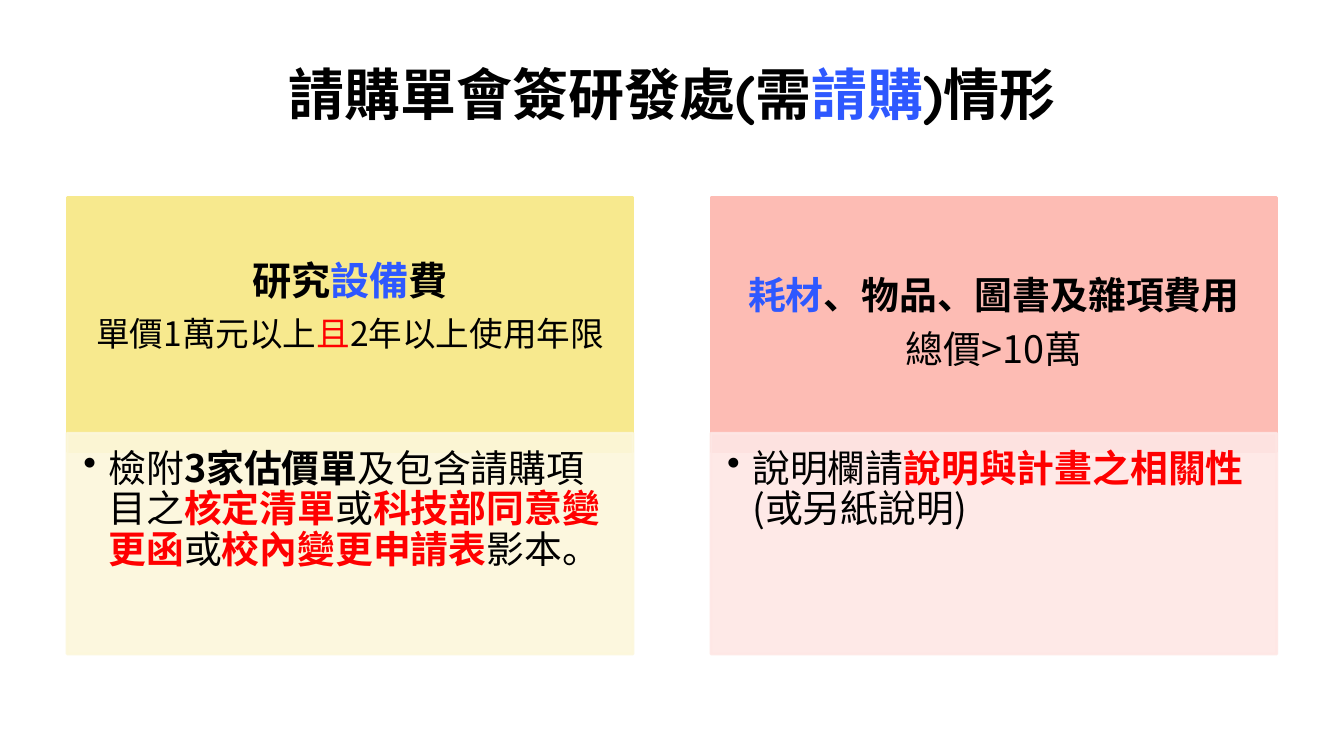
from lxml import etree
from pptx import Presentation, util as u
from pptx.dml.color import RGBColor
from pptx.enum import shapes, text
from pptx.oxml import ns

W, H = u.Inches(13.333), u.Inches(7.5)
CJK, TITLE_FONT = "Noto Sans CJK SC", "Quicksand"

BLACK = RGBColor(0, 0, 0)
BLUE = RGBColor(0x2E, 0x58, 0xFF)
RED = RGBColor(0xFF, 0, 0)
YELLOW = RGBColor(0xF7, 0xE9, 0x8E)
CREAM = RGBColor(0xFC, 0xF7, 0xDB)
PINK = RGBColor(0xFD, 0xBC, 0xB4)
BLUSH = RGBColor(0xFE, 0xE7, 0xE5)

# Grid, as shares of the slide's size
MARGIN, COL_W = 0.05, 0.421
COLUMNS = (MARGIN, 1 - MARGIN - COL_W)
HEAD_TOP, HEAD_H = 0.261, 0.337
BODY_TOP, BODY_H = 0.573, 0.292


def area(x, y, w, h):
    return round(x * W), round(y * H), round(w * W), round(h * H)


def write(p, runs, size, font=CJK, align=text.PP_ALIGN.LEFT, line=None,
          after=0, bullet=False):
    """Fill a paragraph with (text, colour, bold) runs."""
    p.alignment = align
    p.space_after = u.Pt(after)
    if line:
        p.line_spacing = line
    if bullet:
        pPr = p._p.get_or_add_pPr()
        pPr.set("marL", str(u.Inches(0.25)))
        pPr.set("indent", str(-u.Inches(0.25)))
        etree.SubElement(pPr, ns.qn("a:buChar")).set("char", "•")
    for words, color, bold in runs:
        r = p.add_run()
        r.text = words
        r.font.size, r.font.bold, r.font.name = u.Pt(size), bold, font
        r.font.color.rgb = color
        ea = etree.SubElement(r._r.get_or_add_rPr(), ns.qn("a:ea"))
        ea.set("typeface", CJK)


def frame(sp, anchor, insets=(0.1, 0.05, 0.1, 0.05)):
    tf = sp.text_frame
    tf.word_wrap = True
    tf.vertical_anchor = anchor
    (tf.margin_left, tf.margin_top,
     tf.margin_right, tf.margin_bottom) = map(u.Inches, insets)
    return tf


def panel(s, box, color, opacity=100):
    sp = s.shapes.add_shape(shapes.MSO_SHAPE.RECTANGLE, *box)
    sp.shadow.inherit = False
    sp.fill.solid()
    sp.fill.fore_color.rgb = color
    sp.line.color.rgb = color
    sp.line.width = u.Pt(2)
    if opacity < 100:
        for clr in sp._element.spPr.iter(ns.qn("a:srgbClr")):
            etree.SubElement(clr, ns.qn("a:alpha")).set("val", str(opacity * 1000))
    return sp


def title(s, runs):
    sp = s.shapes.add_textbox(*area(MARGIN, 0.04, 1 - 2 * MARGIN, 0.167))
    tf = frame(sp, text.MSO_ANCHOR.MIDDLE)
    write(tf.paragraphs[0], runs, 40, font=TITLE_FONT, align=text.PP_ALIGN.CENTER)


def header(s, x, color, lines, bottom=0.12):
    """Heading panel; lines holds (size, runs) pairs."""
    sp = panel(s, area(x, HEAD_TOP, COL_W, HEAD_H), color)
    tf = frame(sp, text.MSO_ANCHOR.MIDDLE, (0.22, 0.12, 0.22, bottom))
    for i, (size, runs) in enumerate(lines):
        p = tf.add_paragraph() if i else tf.paragraphs[0]
        write(p, runs, size, align=text.PP_ALIGN.CENTER, line=0.9,
              after=round(size * 0.35, 1))


def body(s, x, color, runs):
    sp = panel(s, area(x, BODY_TOP, COL_W, BODY_H), color, opacity=90)
    tf = frame(sp, text.MSO_ANCHOR.TOP, (0.16, 0.16, 0.21, 0.24))
    write(tf.paragraphs[0], runs, 27, line=0.9, after=4, bullet=True)


def main():
    prs = Presentation()
    prs.slide_width, prs.slide_height = W, H
    s = prs.slides.add_slide(prs.slide_layouts[6])
    left, right = COLUMNS

    title(s, [("請購單會簽研發處(需", BLACK, True), ("請購", BLUE, True),
              (")情形", BLACK, True)])

    # Equipment
    header(s, left, YELLOW, [
        (28, [("研究", BLACK, True), ("設備", BLUE, True), ("費", BLACK, True)]),
        (24, [("單價1萬元以上", BLACK, False), ("且", RED, False),
              ("2年以上使用年限", BLACK, False)]),
    ], bottom=0.46)
    body(s, left, CREAM, [
        ("檢附", BLACK, False), ("3家估價單", BLACK, True),
        ("及包含請購項目之", BLACK, False), ("核定清單", RED, True),
        ("或", BLACK, False), ("科技部同意變更函", RED, True),
        ("或", BLACK, False), ("校內變更申請表", RED, True),
        ("影本。", BLACK, False)])

    # Consumables
    header(s, right, PINK, [
        (27, [("耗材", BLUE, True), ("、物品、圖書及雜項費用", BLACK, True)]),
        (27, [("總價>10萬", BLACK, False)]),
    ])
    body(s, right, BLUSH, [
        ("說明欄請", BLACK, False), ("說明與計畫之相關性", RED, True),
        ("(或另紙說明)", BLACK, False)])

    prs.save("out.pptx")


if __name__ == "__main__":
    main()
